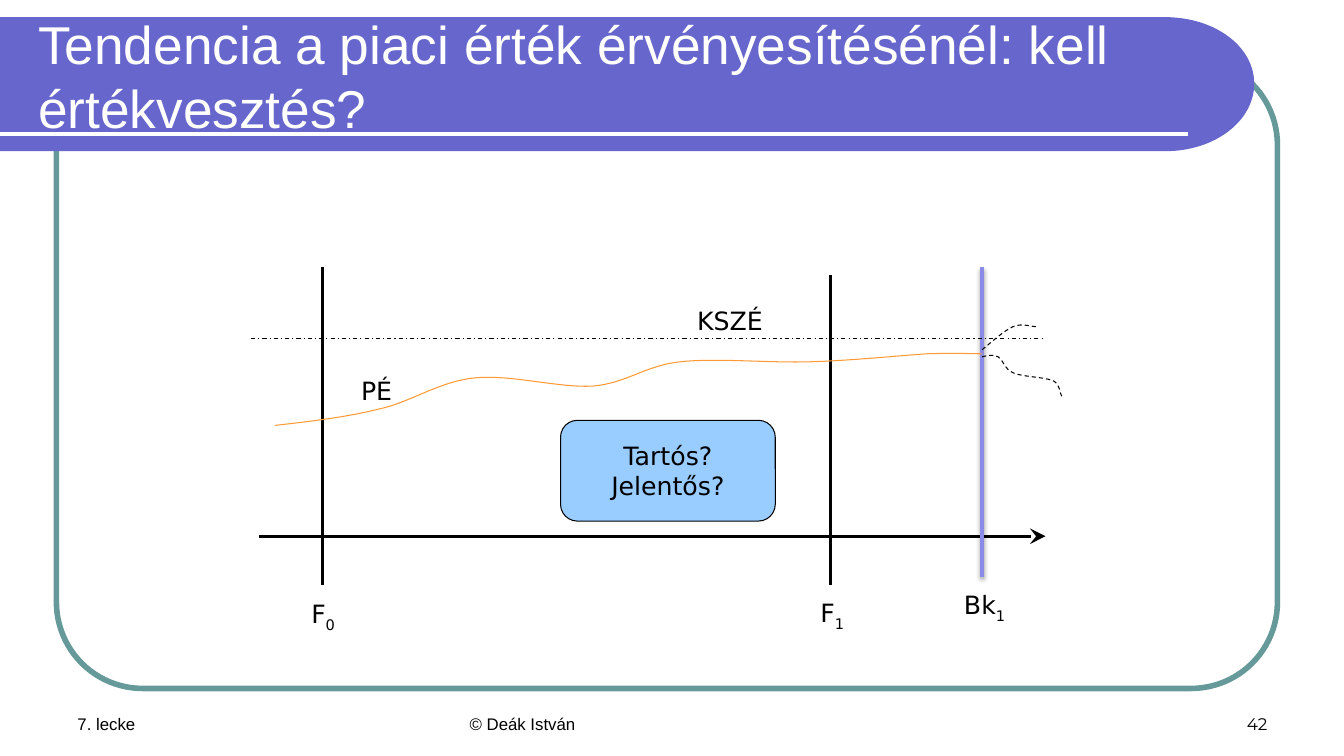
import pptx
import pptx.dml.color
import pptx.enum.dml
import pptx.enum.shapes
import pptx.enum.text
import pptx.oxml
import pptx.oxml.ns
import pptx.util

COLORS = {"black": "000000", "white": "FFFFFF", "banner": "6666CC", "frame": "669999",
          "balance": "8A8AE7", "market": "FF9933", "box": "99CCFF"}
ALIGN = pptx.enum.text.PP_ALIGN
ANCHOR = pptx.enum.text.MSO_ANCHOR
DASH = pptx.enum.dml.MSO_LINE
SHAPE = pptx.enum.shapes.MSO_SHAPE
ROWS = 75


def rgb(name):
    """Return the palette colour called name."""
    return pptx.dml.color.RGBColor.from_string(COLORS[name])


def xml(tag, body="", **attrs):
    """Build one DrawingML element."""
    a = "".join(f' {k}="{v}"' for k, v in attrs.items())
    return pptx.oxml.parse_xml(f"<a:{tag} {pptx.oxml.ns.nsdecls('a')}{a}>{body}</a:{tag}>")


def write(tf, text, sub="", font="DejaVu Sans", size=18, color="black",
          align=ALIGN.CENTER, anchor=ANCHOR.TOP, wrap=True):
    """Fill a text frame, one paragraph per line, with an optional subscript."""
    tf.word_wrap, tf.vertical_anchor = wrap, anchor
    for i, line in enumerate(text.split("\n")):
        p = tf.add_paragraph() if i else tf.paragraphs[0]
        p.alignment = align
        for part in filter(None, (line, sub)):
            r = p.add_run()
            r.text = part
            r.font.name, r.font.size = font, pptx.util.Pt(size)
            r.font.color.rgb = rgb(color)
            if part is sub:
                r.font._element.set("baseline", "-25000")


class Deck:
    """Draw on one slide, measured in square cells, 75 rows to its height."""

    def __init__(self):
        """Open a wide presentation with a blank slide."""
        self.prs = pptx.Presentation()
        self.prs.slide_width = pptx.util.Inches(13.33)
        self.prs.slide_height = pptx.util.Inches(7.5)
        self.s = self.prs.slides.add_slide(self.prs.slide_layouts[6])

    def cells(self, *values):
        """Turn grid cells into slide lengths."""
        return [round(v * self.prs.slide_height / ROWS) for v in values]

    def style(self, sp, fill=None, line=None, width=0.75, dash=None):
        """Set fill and outline, and drop the shadow."""
        sp.shadow.inherit = False
        if fill:
            sp.fill.solid()
            sp.fill.fore_color.rgb = rgb(fill)
        else:
            sp.fill.background()
        if line:
            self.stroke(sp.line, line, width, dash)
        else:
            sp.line.fill.background()

    def stroke(self, ln, color, width, dash=None):
        """Set colour, width and dash of a line."""
        ln.color.rgb, ln.width = rgb(color), pptx.util.Pt(width)
        if dash:
            ln.dash_style = dash

    def text(self, at, text, **fmt):
        """Add a text box."""
        sp = self.s.shapes.add_textbox(*self.cells(*at))
        write(sp.text_frame, text, **fmt)

    def rounded(self, at, radius, **look):
        """Add a rounded rectangle."""
        sp = self.s.shapes.add_shape(SHAPE.ROUNDED_RECTANGLE, *self.cells(*at))
        sp.adjustments[0] = radius
        self.style(sp, **look)
        return sp

    def line(self, x1, y1, x2, y2, color="black", width=2.25, dash=None,
             arrow=False, shadow=""):
        """Add a straight line."""
        sp = self.s.shapes.add_connector(pptx.enum.shapes.MSO_CONNECTOR.STRAIGHT,
                                         *self.cells(x1, y1, x2, y2))
        self.stroke(sp.line, color, width, dash)
        if arrow:
            sp.line._get_or_add_ln().append(xml("tailEnd", type="stealth", w="lg", len="lg"))
        sp._element.spPr.append(xml("effectLst", shadow))

    def curve(self, points, corners=(), **look):
        """Add cubic curves, three points each, closed through any corners."""
        pts = [self.cells(*pt) for pt in (*points, *corners)]
        fb = self.s.shapes.build_freeform(*pts[0])
        fb.add_line_segments(pts[1:], close=bool(corners))
        sp = fb.convert_to_shape()
        steps = list(sp._element.iter(pptx.oxml.ns.qn("a:lnTo")))
        for i in range(0, len(points) - 1, 3):
            cubic = xml("cubicBezTo")
            steps[i].addprevious(cubic)
            for step in steps[i:i + 3]:
                cubic.append(step[0])
                step.getparent().remove(step)
        self.style(sp, **look)


def main():
    """Build and save the slide."""
    d = Deck()
    d.rounded((5.6, 5.8, 121.1, 62.5), 0.137, line="frame", width=4)
    nose = [(115.5, 1.7), (120.5, 1.7), (124.4, 4.6), (124.4, 8.3),
            (124.4, 12), (120.5, 15), (115.6, 15)]
    d.curve(nose, corners=[(0, 15), (0, 1.7)], fill="banner")
    d.line(0, 13.3, 117.8, 13.3, color="white", width=3)

    for x, w, text, font, align in (
            (6.7, 31.1, "7. lecke", "Arial", ALIGN.LEFT),
            (45.6, 42.2, "© Deák István", "Arial", ALIGN.LEFT),
            (95.6, 31.1, "42", "Montserrat", ALIGN.RIGHT)):
        d.text((x, 68.3, w, 5), text, font=font, size=12, align=align, anchor=ANCHOR.BOTTOM)
    d.text((2.8, 2.5, 116.9, 10), "Tendencia a piaci érték érvényesítésénél: kell értékvesztés?",
           font="Arial", size=38, color="white", align=ALIGN.LEFT, anchor=ANCHOR.MIDDLE)

    shadow = ('<a:outerShdw blurRad="39370" dist="22860" dir="5400000" rotWithShape="0">'
              '<a:srgbClr val="000000"><a:alpha val="35000"/></a:srgbClr></a:outerShdw>')
    d.line(32, 26.5, 32, 58)
    d.line(82.4, 27.3, 82.4, 58)
    d.line(25.7, 53.2, 103.7, 53.2, arrow=True)
    d.line(97.4, 26.5, 97.4, 57.2, color="balance", width=3, shadow=shadow)
    d.line(24.9, 33.6, 103.7, 33.6, width=0.75, dash=DASH.DASH_DOT)

    for x, y, w, text, sub in ((29.8, 58.9, 4.5, "F", "0"), (80.3, 58.8, 4.5, "F", "1"),
                               (93.4, 58, 8.5, "Bk", "1"), (68, 29.8, 8.8, "KSZÉ", ""),
                               (34.8, 36.7, 5.1, "PÉ", "")):
        d.text((x, y, w, 4), text, sub=sub, wrap=False)

    rise = [(97.4, 34.7), (98.5, 33.8), (99.6, 32.8), (100.5, 32.4),
            (101.4, 32), (102.5, 32.5), (102.9, 32.4)]
    fall = [(97.4, 35.4), (97.9, 35.3), (98.4, 35.1), (99, 35.4),
            (99.5, 35.7), (99.6, 36.6), (100.5, 37), (101.4, 37.4), (103.7, 37.4),
            (104.5, 37.8), (105.2, 38.2), (105.1, 39.1), (105.3, 39.3)]
    market = [(27.3, 42.2), (30.8, 41.8), (34.3, 41.4), (37.5, 40.6),
              (40.8, 39.9), (43.4, 37.9), (47, 37.5), (50.5, 37.1), (55.4, 38.5),
              (58.8, 38.3), (62.2, 38), (63.9, 36.3), (67.4, 35.9),
              (71, 35.5), (76, 36), (80.1, 35.9), (84.1, 35.8), (89, 35.3),
              (91.9, 35.1), (94.8, 35), (96.5, 35.1), (97.4, 35.1)]
    for outlook in (rise, fall):
        d.curve(outlook, line="black", dash=DASH.DASH)
    d.curve(market, line="market")

    question = d.rounded((55.6, 41.7, 21.3, 10), 0.167, fill="box", line="black")
    write(question.text_frame, "Tartós?\nJelentős?", anchor=ANCHOR.MIDDLE)
    d.prs.save("out.pptx")


if __name__ == "__main__":
    main()
